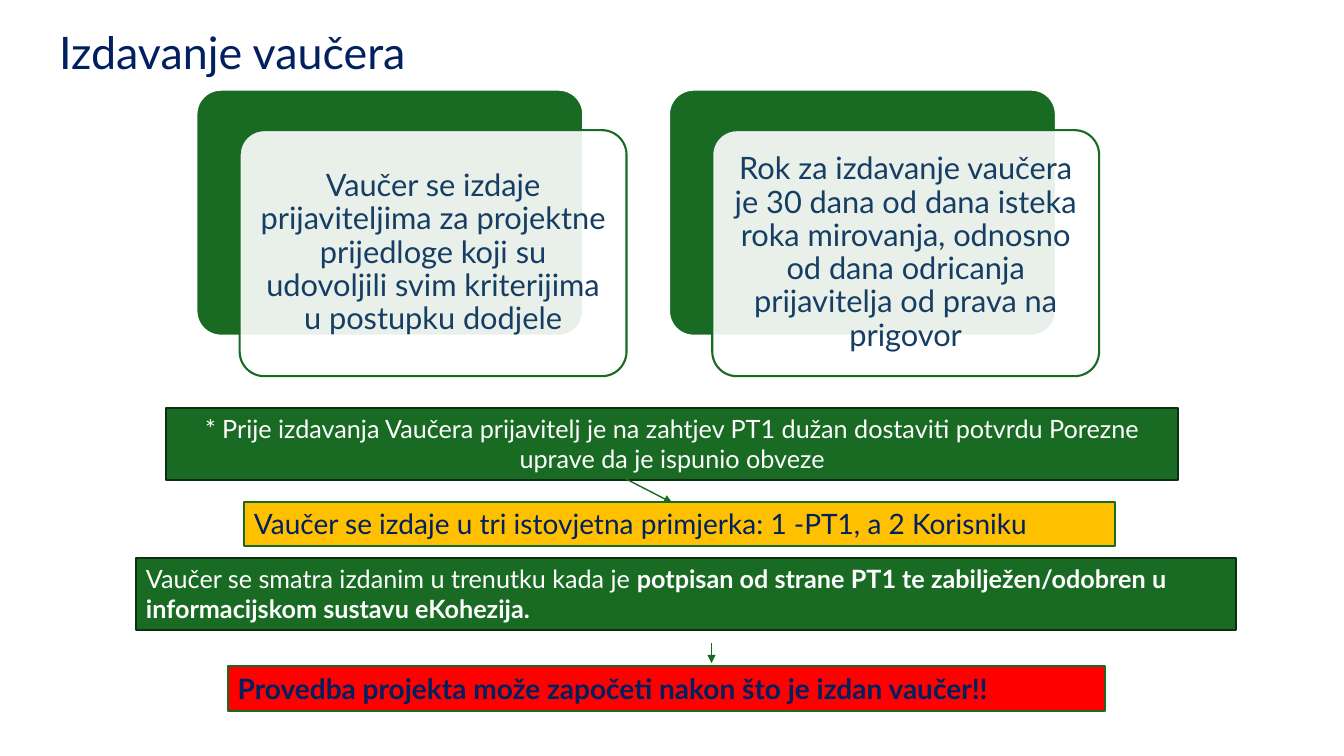
from lxml import etree
from pptx import Presentation
from pptx.dml.color import RGBColor
from pptx.enum.shapes import MSO_CONNECTOR as CONN, MSO_SHAPE as SHAPE
from pptx.enum.text import MSO_ANCHOR as ANCHOR, MSO_AUTO_SIZE as AUTO, PP_ALIGN as ALIGN
from pptx.oxml.ns import qn
from pptx.util import Cm, Pt

FONT = "Lato"
COLORS = {
    "navy": "002060",
    "blue": "163E64",
    "green": "196B24",
    "dark": "0B2F10",
    "gold": "FFC000",
    "red": "FF0000",
    "white": "FFFFFF",
}
CARDS = [
    "Vaučer se izdaje prijaviteljima za projektne prijedloge koji su "
    "udovoljili svim kriterijima u postupku dodjele",
    "Rok za izdavanje vaučera je 30 dana od dana isteka roka mirovanja, "
    "odnosno od dana odricanja prijavitelja od prava na prigovor",
]


def rgb(name):
    return RGBColor.from_string(COLORS[name])


def write(tf, text, size, color, bold=False, align=ALIGN.LEFT, spacing=None, after=0):
    tf.word_wrap = True
    tf.vertical_anchor = ANCHOR.MIDDLE
    p = tf.paragraphs[0]
    p.alignment = align
    p.space_after = Pt(after)
    if spacing:
        p.line_spacing = spacing
    r = p.add_run()
    r.text = text
    r.font.name = FONT
    r.font.size = Pt(size)
    r.font.bold = bold
    r.font.color.rgb = rgb(color)


def add_box(slide, kind, box, fill, line, opacity=None):
    sp = slide.shapes.add_shape(kind, *map(Cm, box))
    sp.shadow.inherit = False
    sp.fill.solid()
    sp.fill.fore_color.rgb = rgb(fill)
    sp.line.color.rgb = rgb(line)
    sp.line.width = Pt(1.5)
    if opacity:
        clr = sp.fill._xPr.find(qn("a:solidFill"))[0]
        etree.SubElement(clr, qn("a:alpha")).set("val", str(opacity * 1000))
    return sp


def add_title(slide, box, text):
    tb = slide.shapes.add_textbox(*map(Cm, box))
    write(tb.text_frame, text, 32, "navy", spacing=0.9, after=6)


def add_card(slide, box, text):
    x, y, w, h = box
    back = add_box(slide, SHAPE.ROUNDED_RECTANGLE, box, "green", "white")
    front = add_box(slide, SHAPE.ROUNDED_RECTANGLE, (x + 1.09, y + 1.02, w, h),
                    "white", "green", opacity=90)
    for sp in (back, front):
        sp.adjustments[0] = 0.1
    tf = front.text_frame
    tf.margin_left = tf.margin_right = tf.margin_top = tf.margin_bottom = Cm(0.23)
    write(tf, text, 22, "blue", align=ALIGN.CENTER, spacing=0.9, after=7.7)


def add_banner(slide, box, fill, line, text, size, color, bold_tail="", **fmt):
    sp = add_box(slide, SHAPE.RECTANGLE, box, fill, line)
    tf = sp.text_frame
    write(tf, text, size, color, **fmt)
    tf.vertical_anchor = ANCHOR.TOP
    tf.auto_size = AUTO.SHAPE_TO_FIT_TEXT
    if bold_tail:
        r = tf.paragraphs[0].add_run()
        r.text = bold_tail
        r.font.name = FONT
        r.font.size = Pt(size)
        r.font.bold = True
        r.font.color.rgb = rgb(color)


def add_arrow(slide, start, end):
    cx = slide.shapes.add_connector(CONN.STRAIGHT, *map(Cm, start + end))
    cx.line.color.rgb = rgb("green")
    cx.line.width = Pt(1)
    etree.SubElement(cx.line._get_or_add_ln(), qn("a:tailEnd")).set("type", "triangle")
    etree.SubElement(cx._element.spPr, qn("a:effectLst"))


def add_cards(slide, x, y):
    for i, text in enumerate(CARDS):
        add_card(slide, (x + i * 11.91, y, 9.75, 6.2), text)


def add_steps(slide):
    add_banner(slide, (4.19, 10.29, 25.5, 1.8), "green", "dark",
               "* Prije izdavanja Vaučera prijavitelj je na zahtjev PT1 dužan "
               "dostaviti potvrdu Porezne uprave da je ispunio obveze",
               18, "white", align=ALIGN.CENTER)
    add_banner(slide, (6.15, 12.65, 21.95, 1.12), "gold", "green",
               "Vaučer se izdaje u tri istovjetna primjerka: 1 -PT1, a 2 Korisniku",
               20, "navy")
    add_banner(slide, (3.43, 14.07, 27.71, 1.8), "green", "dark",
               "Vaučer se smatra izdanim u trenutku kada je ", 18, "white",
               bold_tail="potpisan od strane PT1 te zabilježen/odobren u "
                         "informacijskom sustavu eKohezija.")
    add_arrow(slide, (15.72, 12.04), (16.94, 12.67))
    add_arrow(slide, (17.93, 16.21), (17.93, 16.71))
    add_banner(slide, (5.74, 16.79, 22.12, 1.12), "red", "green",
               "Provedba projekta može započeti nakon što je izdan vaučer!!",
               20, "navy", bold=True)


def main():
    prs = Presentation()
    prs.slide_width, prs.slide_height = Cm(33.87), Cm(19.05)
    slide = prs.slides.add_slide(prs.slide_layouts[6])
    add_title(slide, (1.24, -0.08, 27.48, 2.92), "Izdavanje vaučera")
    add_cards(slide, 4.95, 2.26)
    add_steps(slide)
    prs.save("out.pptx")


if __name__ == "__main__":
    main()
